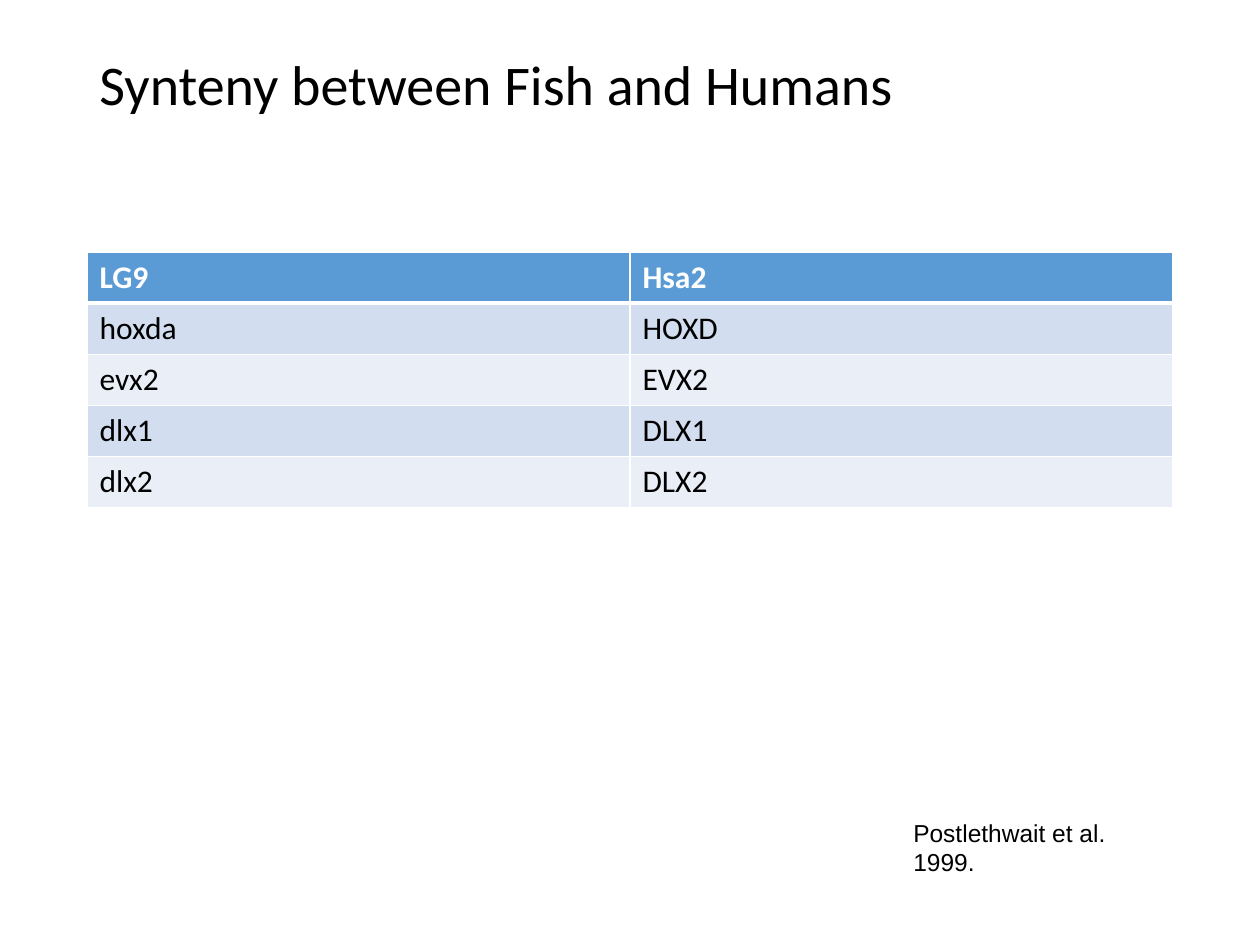
from dataclasses import dataclass

from lxml import etree
from pptx import Presentation
from pptx.dml.color import RGBColor
from pptx.enum.text import MSO_ANCHOR
from pptx.oxml.ns import qn
from pptx.util import Inches, Pt

TOP = MSO_ANCHOR.TOP
BLANK_LAYOUT = 6


@dataclass(frozen=True)
class Theme:
    text: str = "000000"
    light: str = "FFFFFF"
    header: str = "5B9BD5"
    bands: tuple = ("D2DEEF", "EAEFF7")
    body_font: str = "Calibri"
    citation_font: str = "Arial"
    title_size: int = 32
    table_size: int = 18
    citation_size: int = 14
    border: int = 1
    header_border: int = 3


THEME = Theme()
GENES = [
    ("LG9", "Hsa2"),
    ("hoxda", "HOXD"),
    ("evx2", "EVX2"),
    ("dlx1", "DLX1"),
    ("dlx2", "DLX2"),
]


def style_text(text_frame, font, size, color=THEME.text, bold=False):
    for paragraph in text_frame.paragraphs:
        for span in paragraph.runs:
            span.font.name = font
            span.font.size = Pt(size)
            span.font.bold = bold
            span.font.color.rgb = RGBColor.from_string(color)


def add_text(page, text, left, top, width, height, font, size):
    box = page.shapes.add_textbox(
        Inches(left), Inches(top), Inches(width), Inches(height)
    )
    frame = box.text_frame
    frame.word_wrap = True
    frame.vertical_anchor = TOP
    frame.text = text
    style_text(frame, font, size)
    return box


def set_borders(cell, top, bottom):
    properties = cell._tc.get_or_add_tcPr()
    widths = {"lnL": THEME.border, "lnR": THEME.border, "lnT": top, "lnB": bottom}
    for position, (side, width) in enumerate(widths.items()):
        line = etree.Element(qn(f"a:{side}"), w=str(Pt(width)))
        fill = etree.SubElement(line, qn("a:solidFill"))
        etree.SubElement(fill, qn("a:srgbClr"), val=THEME.light)
        properties.insert(position, line)


def add_gene_table(page, left, top, column_width, row_height):
    row_count, column_count = len(GENES), len(GENES[0])
    table = page.shapes.add_table(
        row_count,
        column_count,
        Inches(left),
        Inches(top),
        Inches(column_width * column_count),
        Inches(row_height * row_count),
    ).table
    for row, values in enumerate(GENES):
        is_header = row == 0
        color = THEME.light if is_header else THEME.text
        fill = THEME.header if is_header else THEME.bands[(row - 1) % 2]
        top_border = THEME.header_border if row == 1 else THEME.border
        bottom_border = THEME.header_border if is_header else THEME.border
        for column, value in enumerate(values):
            cell = table.cell(row, column)
            cell.text_frame.text = value
            style_text(
                cell.text_frame, THEME.body_font, THEME.table_size, color, is_header
            )
            cell.fill.solid()
            cell.fill.fore_color.rgb = RGBColor.from_string(fill)
            set_borders(cell, top_border, bottom_border)


def main():
    deck = Presentation()
    deck.slide_width = Inches(10)
    deck.slide_height = Inches(7.5)
    page = deck.slides.add_slide(deck.slide_layouts[BLANK_LAYOUT])

    title = add_text(
        page, "Synteny between Fish and Humans",
        0.69, 0.4, 8.62, 1.45, THEME.body_font, THEME.title_size,
    )
    title.text_frame.paragraphs[0].line_spacing = 0.9
    add_gene_table(page, 0.69, 2, 4.31, 0.406)
    add_text(
        page, "Postlethwait et al. 1999.",
        7.15, 6.44, 2.26, 0.33, THEME.citation_font, THEME.citation_size,
    )
    deck.save("out.pptx")


if __name__ == "__main__":
    main()
